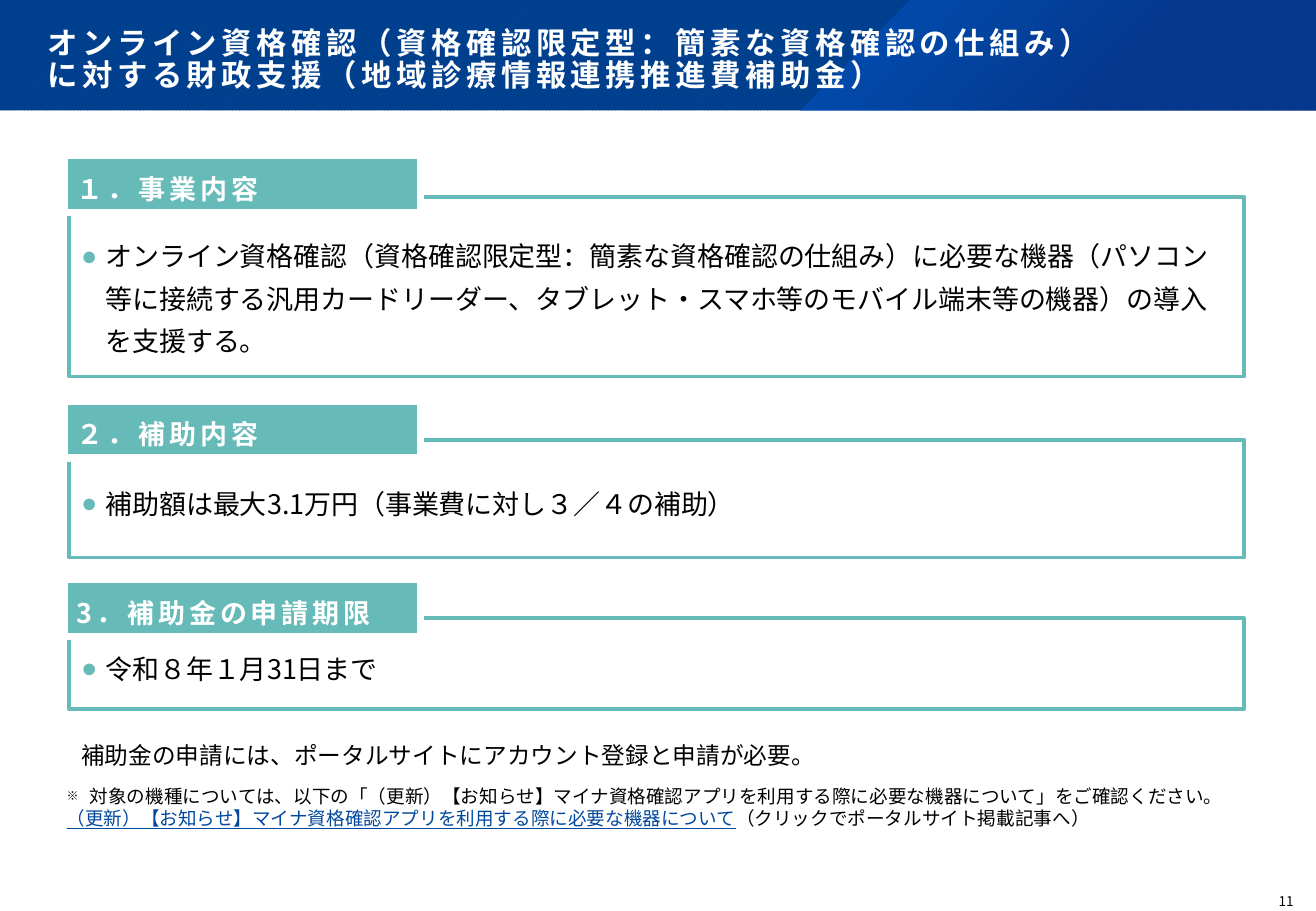
from lxml import etree
from pptx import Presentation
from pptx.dml.color import RGBColor
from pptx.enum.dml import MSO_PATTERN
from pptx.enum.shapes import MSO_SHAPE
from pptx.enum.text import MSO_ANCHOR, PP_ALIGN
from pptx.oxml.ns import qn
from pptx.util import Inches, Pt

RECTANGLE = MSO_SHAPE.RECTANGLE
DIAGONAL = MSO_PATTERN.DARK_UPWARD_DIAGONAL
TOP, MIDDLE, BOTTOM = MSO_ANCHOR.TOP, MSO_ANCHOR.MIDDLE, MSO_ANCHOR.BOTTOM
LEFT, CENTER = PP_ALIGN.LEFT, PP_ALIGN.CENTER

FONT = "Noto Sans CJK JP"
TEAL, WHITE, BLACK, LINK_BLUE = "66BAB7", "FFFFFF", "000000", "00489E"
WIDTH, HEIGHT = 10.83, 7.5

LINK_TITLE = "（更新）【お知らせ】マイナ資格確認アプリを利用する際に必要な機器について"
TITLE_LINES = [
    "オンライン資格確認（資格確認限定型：簡素な資格確認の仕組み）",
    "に対する財政支援（地域診療情報連携推進費補助金）",
]
# heading, body, frame top, frame height, heading rise, top inset, line spacing
SECTIONS = [
    ("１．事業内容",
     "オンライン資格確認（資格確認限定型：簡素な資格確認の仕組み）に必要な機器"
     "（パソコン等に接続する汎用カードリーダー、タブレット・スマホ等のモバイル"
     "端末等の機器）の導入を支援する。", 1.62, 1.48, 0.34, 0.16, 1.3),
    ("２．補助内容", "補助額は最大3.1万円（事業費に対し３／４の補助）",
     3.62, 0.97, 0.32, 0.13, 1.0),
    ("3．補助金の申請期限", "令和８年１月31日まで", 5.09, 0.75, 0.32, 0.13, 1.0),
]


def color(hex_value):
    return RGBColor.from_string(hex_value)


def set_frame(shape, anchor, insets=(0.1, 0.05, 0.1, 0.05)):
    frame = shape.text_frame
    frame.word_wrap = True
    frame.vertical_anchor = anchor
    frame.margin_left, frame.margin_top, frame.margin_right, frame.margin_bottom = map(Inches, insets)
    return frame


def add_text_box(slide, box, anchor=TOP, insets=(0.1, 0.05, 0.1, 0.05)):
    return set_frame(slide.shapes.add_textbox(*map(Inches, box)), anchor, insets)


def add_rectangle(slide, box):
    shape = slide.shapes.add_shape(RECTANGLE, *map(Inches, box))
    shape.shadow.inherit = False
    return shape


def set_line(shape, hex_value, width):
    shape.line.color.rgb = color(hex_value)
    shape.line.width = Pt(width)


def set_font(paragraph, size, hex_value=BLACK, bold=False, tracking=0):
    font = paragraph.font
    font.size, font.bold, font.name = Pt(size), bold, FONT
    font.color.rgb = color(hex_value)
    properties = paragraph._p.pPr.find(qn("a:defRPr"))
    etree.SubElement(properties, qn("a:ea")).set("typeface", FONT)
    if tracking:
        properties.set("spc", str(round(tracking * 100)))


def set_bullet(paragraph, character, indent, hex_value, size=100, typeface=FONT):
    properties = paragraph._p.get_or_add_pPr()
    properties.set("marL", str(Inches(indent)))
    properties.set("indent", str(-Inches(indent)))
    bullet_color = etree.SubElement(properties, qn("a:buClr"))
    etree.SubElement(bullet_color, qn("a:srgbClr")).set("val", hex_value)
    etree.SubElement(properties, qn("a:buSzPct")).set("val", str(size * 1000))
    etree.SubElement(properties, qn("a:buFont")).set("typeface", typeface)
    etree.SubElement(properties, qn("a:buChar")).set("char", character)


def add_banner(slide, left, top, width, height):
    # Patterned band
    band = add_rectangle(slide, (left, top, width, height))
    band.fill.patterned()
    band.fill.pattern = DIAGONAL
    band.fill.fore_color.rgb = color("003579")
    band.fill.back_color.rgb = color("004292")
    band.line.fill.background()

    # Translucent slanted panel
    right, bottom = left + width, top + height
    builder = slide.shapes.build_freeform(Inches(right - 3.34), Inches(top), scale=1.0)
    corners = [(right, top), (right, bottom), (right - 4.25, bottom)]
    builder.add_line_segments([(Inches(x), Inches(y)) for x, y in corners], close=True)
    panel = builder.convert_to_shape()
    panel.shadow.inherit = False
    panel.line.fill.background()
    panel.fill.gradient()
    stops = [(0, "0064DF", 50), (0.62, "0C338E", 55)]
    for stop, (position, hex_value, opacity) in zip(panel.fill.gradient_stops, stops):
        stop.position = position
        stop.color.rgb = color(hex_value)
    gradient = panel._element.spPr.find(qn("a:gradFill"))
    for value, (_, _, opacity) in zip(gradient.iter(qn("a:srgbClr")), stops):
        etree.SubElement(value, qn("a:alpha")).set("val", str(opacity * 1000))
    radial = etree.Element(qn("a:path"), {"path": "circle"})
    etree.SubElement(radial, qn("a:fillToRect"), {"r": "100000", "b": "100000"})
    gradient.replace(gradient.find(qn("a:lin")), radial)

    # Title
    frame = add_text_box(slide, (left, top, width, height), BOTTOM, (0.39, 0.36, 0.36, 0.14))
    paragraph = frame.paragraphs[0]
    paragraph.line_spacing = 0.9
    paragraph.add_run().text = TITLE_LINES[0]
    paragraph.add_line_break()
    paragraph.add_run().text = TITLE_LINES[1]
    set_font(paragraph, 18, WHITE, True, 2.7)


def add_section(slide, left, width, section):
    heading, body, top, height, rise, inset, spacing = section
    # Outlined body
    outline = add_rectangle(slide, (left, top, width, height))
    outline.fill.background()
    set_line(outline, TEAL, 2.25)
    paragraph = set_frame(outline, MIDDLE, (0.1, inset, 0.08, 0.05)).paragraphs[0]
    paragraph.text = body
    paragraph.alignment = LEFT
    paragraph.line_spacing = spacing
    set_bullet(paragraph, "●", 0.2, TEAL, typeface="Arial")
    set_font(paragraph, 16)

    # Heading tab with a white edge that cuts the outline
    tab = add_rectangle(slide, (left - 0.04, top - rise, 2.93, 0.47))
    tab.fill.solid()
    tab.fill.fore_color.rgb = color(TEAL)
    set_line(tab, WHITE, 4.5)
    paragraph = set_frame(tab, MIDDLE).paragraphs[0]
    paragraph.text = heading
    paragraph.alignment = LEFT
    paragraph.line_spacing = 1.3
    paragraph.space_after = Pt(8)
    set_font(paragraph, 16, WHITE, True, 2.4)


def add_notes_on_application(slide, left, top, width):
    # Application procedure
    paragraph = add_text_box(slide, (left + 0.12, top, width, 0.34)).paragraphs[0]
    paragraph.text = "補助金の申請には、ポータルサイトにアカウント登録と申請が必要。"
    set_font(paragraph, 14)

    # Eligible devices
    frame = add_text_box(slide, (left, top + 0.36, width + 0.35, 0.47))
    devices = frame.paragraphs[0]
    devices.text = f"対象の機種については、以下の「{LINK_TITLE}」をご確認ください。"
    set_bullet(devices, "※", 0.19, BLACK, 65)
    set_font(devices, 11)
    article = frame.add_paragraph()
    link = article.add_run()
    link.text = LINK_TITLE
    link.font.underline = True
    link.font.color.rgb = color(LINK_BLUE)
    article.add_run().text = "（クリックでポータルサイト掲載記事へ）"
    set_font(article, 11)


def add_page_number(slide, box):
    paragraph = add_text_box(slide, box, MIDDLE, (0, 0.03, 0, 0)).paragraphs[0]
    paragraph.text = "11"
    paragraph.alignment = CENTER
    set_font(paragraph, 8)


def main():
    presentation = Presentation()
    presentation.slide_width, presentation.slide_height = Inches(WIDTH), Inches(HEIGHT)
    slide = presentation.slides.add_slide(presentation.slide_layouts[6])
    add_banner(slide, 0, 0, WIDTH, 0.91)
    for section in SECTIONS:
        add_section(slide, 0.57, 9.67, section)
    add_notes_on_application(slide, 0.45, 6.05, 9.54)
    add_page_number(slide, (10.37, 7.31, 0.43, 0.19))
    presentation.save("out.pptx")


if __name__ == "__main__":
    main()
